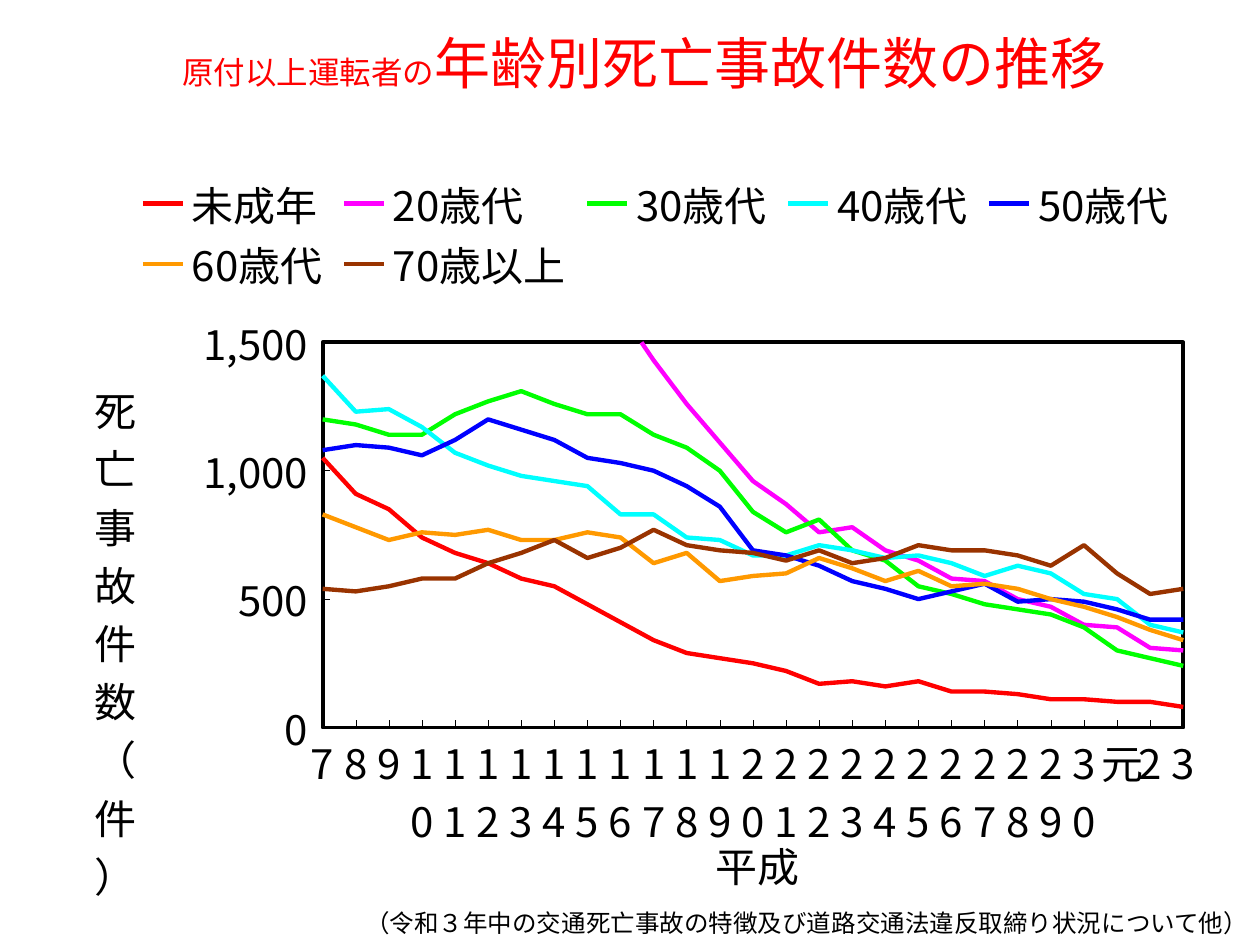
import pptx
import pptx.chart.data
import pptx.dml.color
import pptx.enum.chart
import pptx.enum.text
import pptx.oxml
import pptx.oxml.ns
import pptx.util
from pptx.util import Inches

FONT = "Noto Sans CJK JP"
COLORS = {
    "text": "000000", "title": "FF0000",
    "未成年": "FF0000", "20歳代": "FF00FF", "30歳代": "00FF00", "40歳代": "00FFFF",
    "50歳代": "0000FF", "60歳代": "FF9900", "70歳以上": "993300",
}
YEARS = [str(year) for year in range(7, 31)] + ["元", "2", "3"]
ACCIDENTS = {
    "未成年": [1050, 910, 850, 740, 680, 640, 580, 550, 480, 410, 340, 290, 270, 250,
            220, 170, 180, 160, 180, 140, 140, 130, 110, 110, 100, 100, 80],
    "20歳代": [3170, 2870, 2820, 2660, 2540, 2480, 2260, 2020, 1780, 1620, 1430, 1260, 1110, 960,
             870, 760, 780, 690, 650, 580, 570, 500, 470, 400, 390, 310, 300],
    "30歳代": [1200, 1180, 1140, 1140, 1220, 1270, 1310, 1260, 1220, 1220, 1140, 1090, 1000, 840,
             760, 810, 690, 650, 550, 520, 480, 460, 440, 390, 300, 270, 240],
    "40歳代": [1370, 1230, 1240, 1170, 1070, 1020, 980, 960, 940, 830, 830, 740, 730, 670,
             670, 710, 690, 660, 670, 640, 590, 630, 600, 520, 500, 400, 370],
    "50歳代": [1080, 1100, 1090, 1060, 1120, 1200, 1160, 1120, 1050, 1030, 1000, 940, 860, 690,
             670, 630, 570, 540, 500, 530, 560, 490, 500, 490, 460, 420, 420],
    "60歳代": [830, 780, 730, 760, 750, 770, 730, 730, 760, 740, 640, 680, 570, 590,
             600, 660, 620, 570, 610, 550, 560, 540, 500, 470, 430, 380, 340],
    "70歳以上": [540, 530, 550, 580, 580, 640, 680, 730, 660, 700, 770, 710, 690, 680,
              650, 690, 640, 660, 710, 690, 690, 670, 630, 710, 600, 520, 540],
}


def style_font(font, size, color):
    font.name = FONT
    font.size = pptx.util.Pt(size)
    font.bold = False
    font.color.rgb = pptx.dml.color.RGBColor.from_string(COLORS[color])
    # Japanese characters take the East Asian typeface
    latin = font._rPr.find(pptx.oxml.ns.qn("a:latin"))
    latin.addnext(pptx.oxml.parse_xml(
        f'<a:ea {pptx.oxml.ns.nsdecls("a")} typeface="{FONT}"/>'))


def place(element, left, top, width=None, height=None, inner=False):
    """Give a chart part a manual layout in fractions of the chart."""
    for old in element.findall(pptx.oxml.ns.qn("c:layout")):
        element.remove(old)
    target = '<c:layoutTarget val="inner"/>' if inner else ""
    modes = '<c:xMode val="edge"/><c:yMode val="edge"/>'
    values = "".join(f'<c:{tag} val="{value}"/>' for tag, value in
                     zip("xywh", (left, top, width, height)) if value is not None)
    layout = pptx.oxml.parse_xml(
        f'<c:layout {pptx.oxml.ns.nsdecls("c")}><c:manualLayout>{target}{modes}{values}'
        '</c:manualLayout></c:layout>')
    before = element.find(pptx.oxml.ns.qn("c:tx"))
    if before is None:
        before = element.find(pptx.oxml.ns.qn("c:legendPos"))
    if before is None:
        element.insert(0, layout)
    else:
        before.addnext(layout)


presentation = pptx.Presentation()
presentation.slide_width = Inches(10)
presentation.slide_height = Inches(7.5)
slide = presentation.slides.add_slide(presentation.slide_layouts[5])

# Title
title = slide.shapes.title
title.left, title.top, title.width, title.height = (
    Inches(0.51), Inches(0.07), Inches(9.21), Inches(0.84))
title.text_frame.vertical_anchor = pptx.enum.text.MSO_ANCHOR.MIDDLE
paragraph = title.text_frame.paragraphs[0]
paragraph.alignment = pptx.enum.text.PP_ALIGN.CENTER
for text, size in (("原付以上運転者の", 18), ("年齢別死亡事故件数の推移", 32)):
    run = paragraph.add_run()
    run.text = text
    style_font(run.font, size, "title")

# Line chart
chart_data = pptx.chart.data.CategoryChartData()
chart_data.categories = YEARS
for age_group, counts in ACCIDENTS.items():
    chart_data.add_series(age_group, counts)
chart = slide.shapes.add_chart(
    pptx.enum.chart.XL_CHART_TYPE.LINE, Inches(0.6), Inches(1.31),
    Inches(9.12), Inches(5.96), chart_data).chart
chart.has_title = False
style_font(chart.font, 24, "text")
chart.plots[0].vary_by_categories = False
for series in chart.plots[0].series:
    series.smooth = False
    series.marker.style = pptx.enum.chart.XL_MARKER_STYLE.NONE
    series.format.line.width = pptx.util.Pt(2.5)
    series.format.line.color.rgb = pptx.dml.color.RGBColor.from_string(COLORS[series.name])

# Legend
chart.has_legend = True
chart.legend.position = pptx.enum.chart.XL_LEGEND_POSITION.TOP
chart.legend.include_in_layout = False
style_font(chart.legend.font, 24, "text")
place(chart.legend._element, 0.04, 0.01, 0.93, 0.17)

# Axes and their titles
for axis, text, left, top in ((chart.category_axis, "平成", 0.55, 0.91),
                              (chart.value_axis, "死亡事故件数（件）", 0.01, 0.28)):
    axis.has_major_gridlines = False
    axis.major_tick_mark = pptx.enum.chart.XL_TICK_MARK.INSIDE
    axis.format.line.width = pptx.util.Pt(0.25)
    axis.format.line.color.rgb = pptx.dml.color.RGBColor.from_string(COLORS["text"])
    style_font(axis.tick_labels.font, 24, "text")
    frame = axis.axis_title.text_frame
    run = frame.paragraphs[0].add_run()
    run.text = text
    style_font(run.font, 24, "text")
    place(axis.axis_title._element, left, top)
body = frame._txBody.bodyPr
body.set("rot", "0")
body.set("vert", "wordArtVertRtl")

value_axis = chart.value_axis
value_axis.minimum_scale = 0
value_axis.maximum_scale = 1500
value_axis.major_unit = 500
value_axis.tick_labels.number_format = "#,##0_ "
value_axis.tick_labels.number_format_is_linked = False
# Lines start right on the value axis
value_axis._element.find(pptx.oxml.ns.qn("c:majorUnit")).addprevious(
    pptx.oxml.parse_xml(f'<c:crossBetween {pptx.oxml.ns.nsdecls("c")} val="midCat"/>'))
category_axis = chart.category_axis
category_axis._element.find(pptx.oxml.ns.qn("c:txPr")).find(
    pptx.oxml.ns.qn("a:bodyPr")).set("rot", "0")
category_axis._element.find(pptx.oxml.ns.qn("c:noMultiLvlLbl")).addprevious(
    pptx.oxml.parse_xml(f'<c:tickLblSkip {pptx.oxml.ns.nsdecls("c")} val="1"/>'))

# Plot area with a black frame
plot_area = chart._chartSpace.chart.plotArea
place(plot_area, 0.215, 0.245, 0.749, 0.532, inner=True)
plot_area.append(pptx.oxml.parse_xml(
    f'<c:spPr {pptx.oxml.ns.nsdecls("c", "a")}><a:noFill/><a:ln w="{pptx.util.Pt(2.25)}">'
    f'<a:solidFill><a:srgbClr val="{COLORS["text"]}"/></a:solidFill></a:ln></c:spPr>'))

# Source note
note = slide.shapes.add_textbox(Inches(2.8), Inches(7.16), Inches(7.27), Inches(0.34))
note.text_frame.word_wrap = False
note.text_frame.auto_size = pptx.enum.text.MSO_AUTO_SIZE.SHAPE_TO_FIT_TEXT
run = note.text_frame.paragraphs[0].add_run()
run.text = "（令和３年中の交通死亡事故の特徴及び道路交通法違反取締り状況について他）"
style_font(run.font, 14, "text")

presentation.save("out.pptx")
